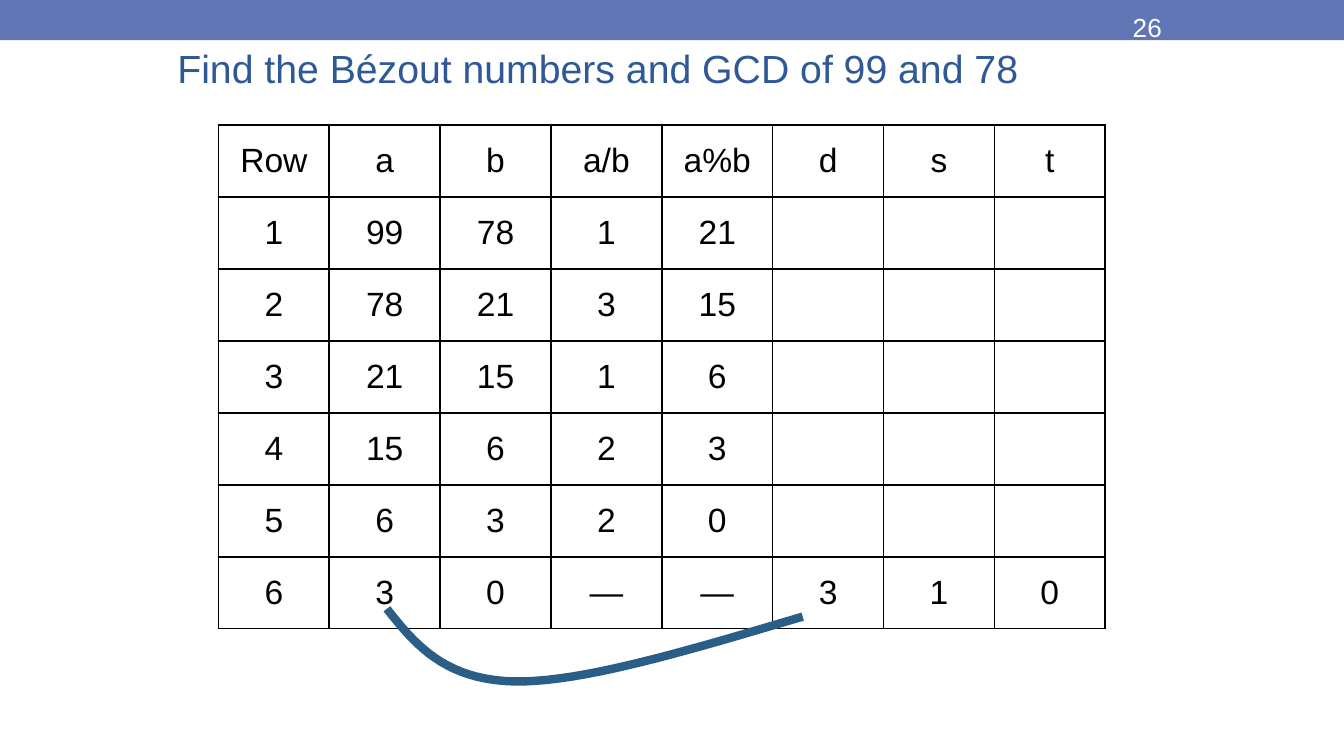
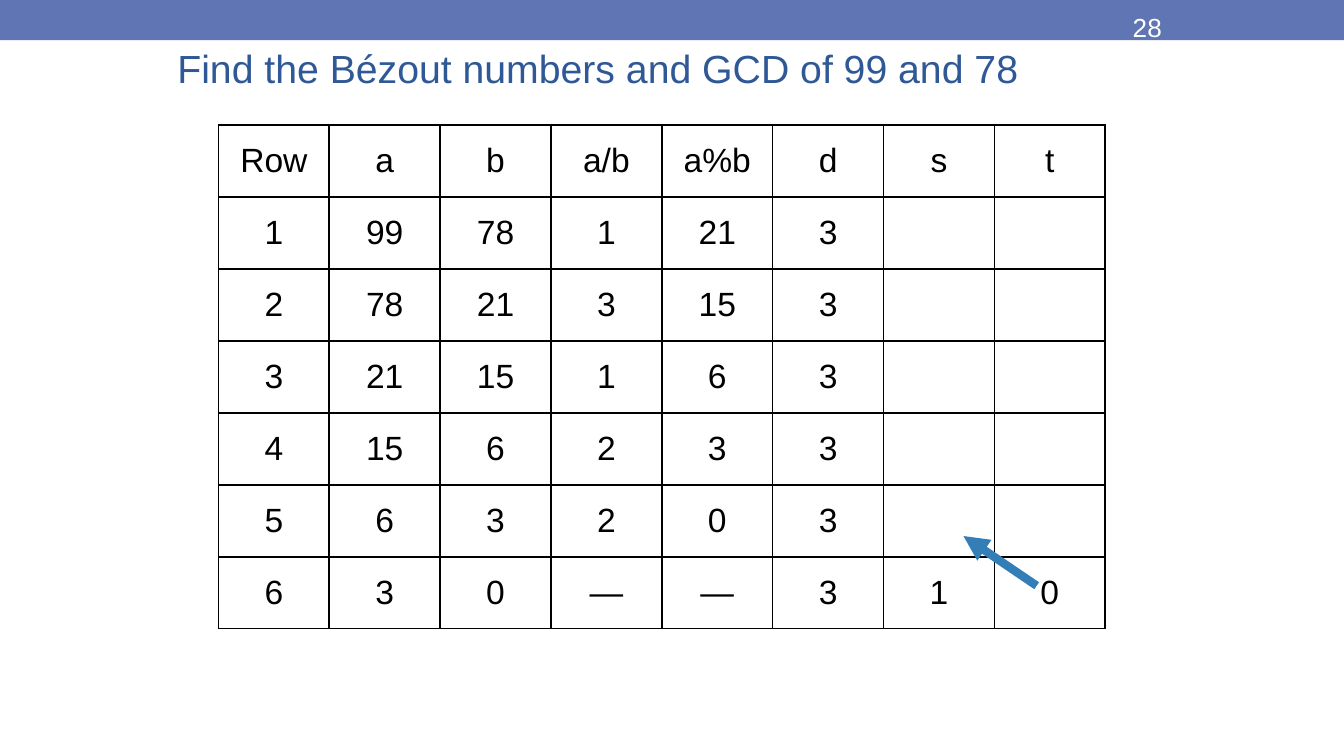
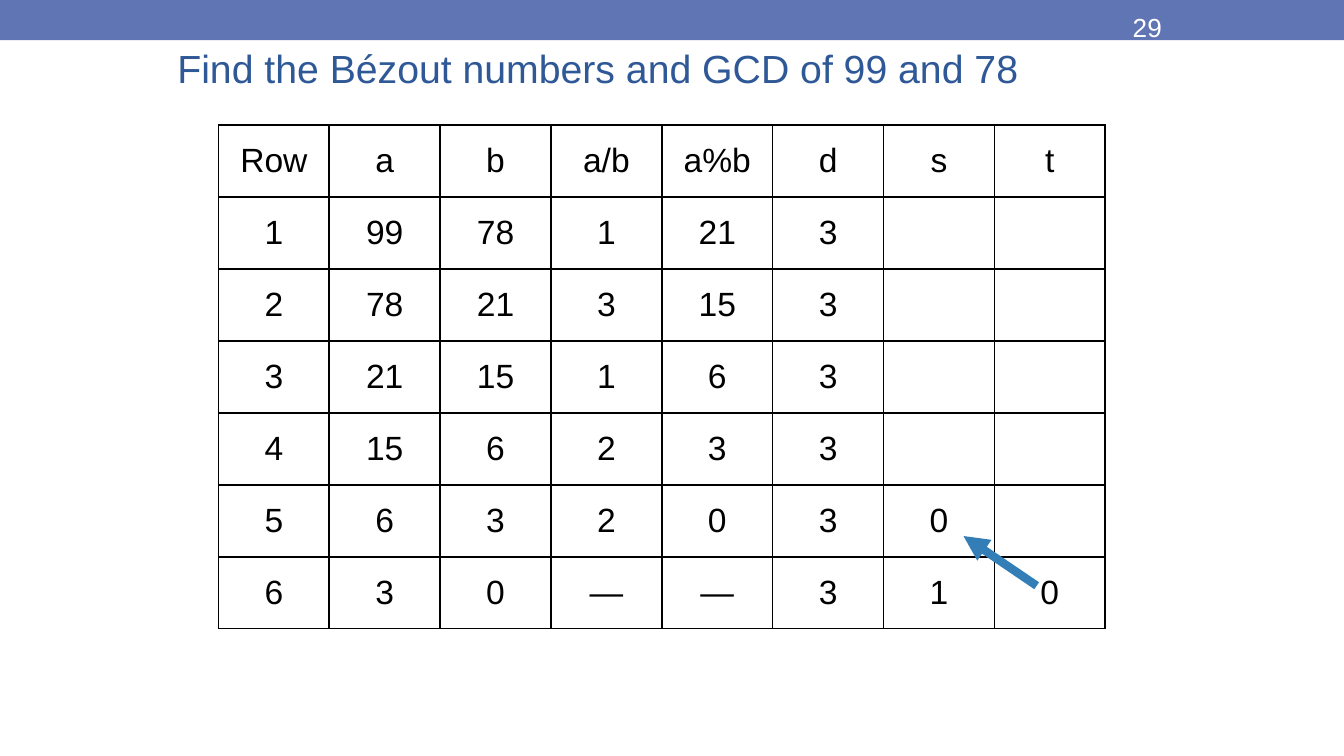
"""Build three steps of the extended Euclid table for 99 and 78."""
from lxml import etree
from pptx import Presentation
from pptx.dml.color import RGBColor
from pptx.enum.shapes import MSO_CONNECTOR, MSO_SHAPE
from pptx.enum.text import MSO_ANCHOR, PP_ALIGN
from pptx.oxml.ns import qn
from pptx.util import Inches, Pt

RECTANGLE = MSO_SHAPE.RECTANGLE
STRAIGHT = MSO_CONNECTOR.STRAIGHT
TOP, MIDDLE, BOTTOM = MSO_ANCHOR.TOP, MSO_ANCHOR.MIDDLE, MSO_ANCHOR.BOTTOM
CENTER = PP_ALIGN.CENTER

WIDTH, HEIGHT = Inches(10), Inches(5.625)
COLORS = {"band": "6076B4", "title": "2F5897", "text": "000000",
          "number": "FFFFFF", "curve": "2A5E87", "arrow": "347EB8"}
FORMATS = {
    "title": {"size": Pt(21), "name": "Arial"},
    "number": {"size": Pt(14), "name": "Arial"},
    "text": {"size": Pt(18), "name": "Arial"},
}
TITLE = "Find the Bézout numbers and GCD of 99 and 78"
HEADINGS = ["Row", "a", "b", "a/b", "a%b", "d", "s", "t"]
COLUMN_D, COLUMN_S = HEADINGS.index("d"), HEADINGS.index("s")
LAST_ROW = 6
TABLE_LEFT, TABLE_TOP = Inches(1.625), Inches(0.93)
COLUMN_WIDTH, ROW_HEIGHT = Inches(6.6) // 8, Inches(3.75) // 7
STROKE = Pt(4.5)

CURVE_START = (1.52, 6.72)
CURVE_SEGMENTS = [
    [(1.77, 7.21), (2.04, 7.71), (2.67, 7.73)],
    [(3.28, 7.75), (4.28, 7.28), (5.27, 6.83)],
]
ARROW_START, ARROW_END = (7.38, 6.40), (6.72, 5.71)


def rgb(name):
    """Return the named colour."""
    return RGBColor.from_string(COLORS[name])


def grid_point(column, row):
    """Turn table columns and rows into a place on the slide."""
    return (round(TABLE_LEFT + column * COLUMN_WIDTH),
            round(TABLE_TOP + row * ROW_HEIGHT))


def write(frame, text, style):
    """Write one styled paragraph and return it."""
    para = frame.paragraphs[0]
    span = para.add_run()
    span.text = text
    for key, value in FORMATS[style].items():
        setattr(span.font, key, value)
    span.font.color.rgb = rgb(style)
    return para


def add_text(page, text, style, place, anchor, insets):
    """Add a text box placed by shares of the slide's size."""
    left, top, width, height = place
    box = page.shapes.add_textbox(
        round(left * WIDTH), round(top * HEIGHT),
        round(width * WIDTH), round(height * HEIGHT))
    frame = box.text_frame
    frame.word_wrap = True
    frame.vertical_anchor = anchor
    for side, inset in zip(("left", "top", "right", "bottom"), insets):
        setattr(frame, f"margin_{side}", Inches(inset))
    write(frame, text, style)


def add_band(page):
    """Add the band along the top edge."""
    band = page.shapes.add_shape(RECTANGLE, 0, 0, WIDTH, Inches(0.3))
    band.shadow.inherit = False
    band.fill.solid()
    band.fill.fore_color.rgb = rgb("band")
    band.line.fill.background()


def add_borders(cell):
    """Draw thin lines on all four sides of a cell."""
    properties = cell._tc.get_or_add_tcPr()
    for side in ("lnL", "lnR", "lnT", "lnB"):
        line = etree.SubElement(properties, qn(f"a:{side}"), w=str(Pt(1)))
        fill = etree.SubElement(line, qn("a:solidFill"))
        etree.SubElement(fill, qn("a:srgbClr"), val=COLORS["text"])


def euclid_rows(a, b):
    """Return the division steps of Euclid's algorithm and its last row."""
    rows = []
    while b:
        rows.append([len(rows) + 1, a, b, a // b, a % b, "", "", ""])
        a, b = b, a % b
    return rows + [[len(rows) + 1, a, 0, "—", "—", a, 1, 0]]


def add_steps(page, known):
    """Add the table, with the known values filled in by row and column."""
    rows = [HEADINGS] + euclid_rows(99, 78)
    table = page.shapes.add_table(
        len(rows), len(HEADINGS), TABLE_LEFT, TABLE_TOP,
        COLUMN_WIDTH * len(HEADINGS), ROW_HEIGHT * len(rows)).table
    table.first_row = table.horz_banding = False
    for column in table.columns:
        column.width = COLUMN_WIDTH
    for i, values in enumerate(rows):
        table.rows[i].height = ROW_HEIGHT
        for j, value in enumerate(values):
            cell = table.cell(i, j)
            cell.vertical_anchor = MIDDLE
            cell.margin_left = cell.margin_right = Inches(0.08)
            cell.margin_top = cell.margin_bottom = Inches(0.04)
            add_borders(cell)
            cell.fill.background()
            text = str(known.get((i, j), value))
            if text:
                write(cell.text_frame, text, "text").alignment = CENTER


def bezier_points(start, segments, steps=20):
    """Return points along a chain of cubic curves."""
    points = [start]
    for controls in segments:
        corners = [points[-1], *controls]
        for step in range(1, steps + 1):
            t = step / steps
            weights = ((1 - t) ** 3, 3 * t * (1 - t) ** 2,
                       3 * t ** 2 * (1 - t), t ** 3)
            points.append(tuple(
                sum(w * corner[axis] for w, corner in zip(weights, corners))
                for axis in (0, 1)))
    return points


def add_curve(page):
    """Add the curve that carries a down to d in the last row."""
    points = [grid_point(*point)
              for point in bezier_points(CURVE_START, CURVE_SEGMENTS)]
    builder = page.shapes.build_freeform(*points[0])
    builder.add_line_segments(points[1:], close=False)
    curve = builder.convert_to_shape()
    curve.shadow.inherit = False
    curve.fill.background()
    curve.line.color.rgb = rgb("curve")
    curve.line.width = STROKE


def add_arrow(page):
    """Add the arrow from the last t to the s above it."""
    arrow = page.shapes.add_connector(
        STRAIGHT, *grid_point(*ARROW_START), *grid_point(*ARROW_END))
    arrow.line.color.rgb = rgb("arrow")
    arrow.line.width = STROKE
    properties = arrow._element.spPr
    etree.SubElement(properties.find(qn("a:ln")), qn("a:tailEnd"),
                     type="triangle")
    etree.SubElement(properties, qn("a:effectLst"))


def add_page(deck, number, known, add_mark):
    """Add one step: band, title, table, mark and page number."""
    page = deck.slides.add_slide(deck.slide_layouts[6])
    add_band(page)
    add_text(page, TITLE, "title", (0.125, 0, 0.75, 0.133), BOTTOM,
             (0.07, 0.07, 0.07, 0.07))
    add_steps(page, known)
    add_mark(page)
    add_text(page, str(number), "number", (0.833, 0.002, 0.117, 0.048), TOP,
             (0.1, 0.07, 0.1, 0))


def main():
    """Build and save the deck."""
    deck = Presentation()
    deck.slide_width, deck.slide_height = WIDTH, HEIGHT
    divisors = {(row, COLUMN_D): 3 for row in range(1, LAST_ROW)}
    first_s = {(LAST_ROW - 1, COLUMN_S): 0}
    add_page(deck, 26, {}, add_curve)
    add_page(deck, 28, divisors, add_arrow)
    add_page(deck, 29, {**divisors, **first_s}, add_arrow)
    deck.save("out.pptx")


if __name__ == "__main__":
    main()
